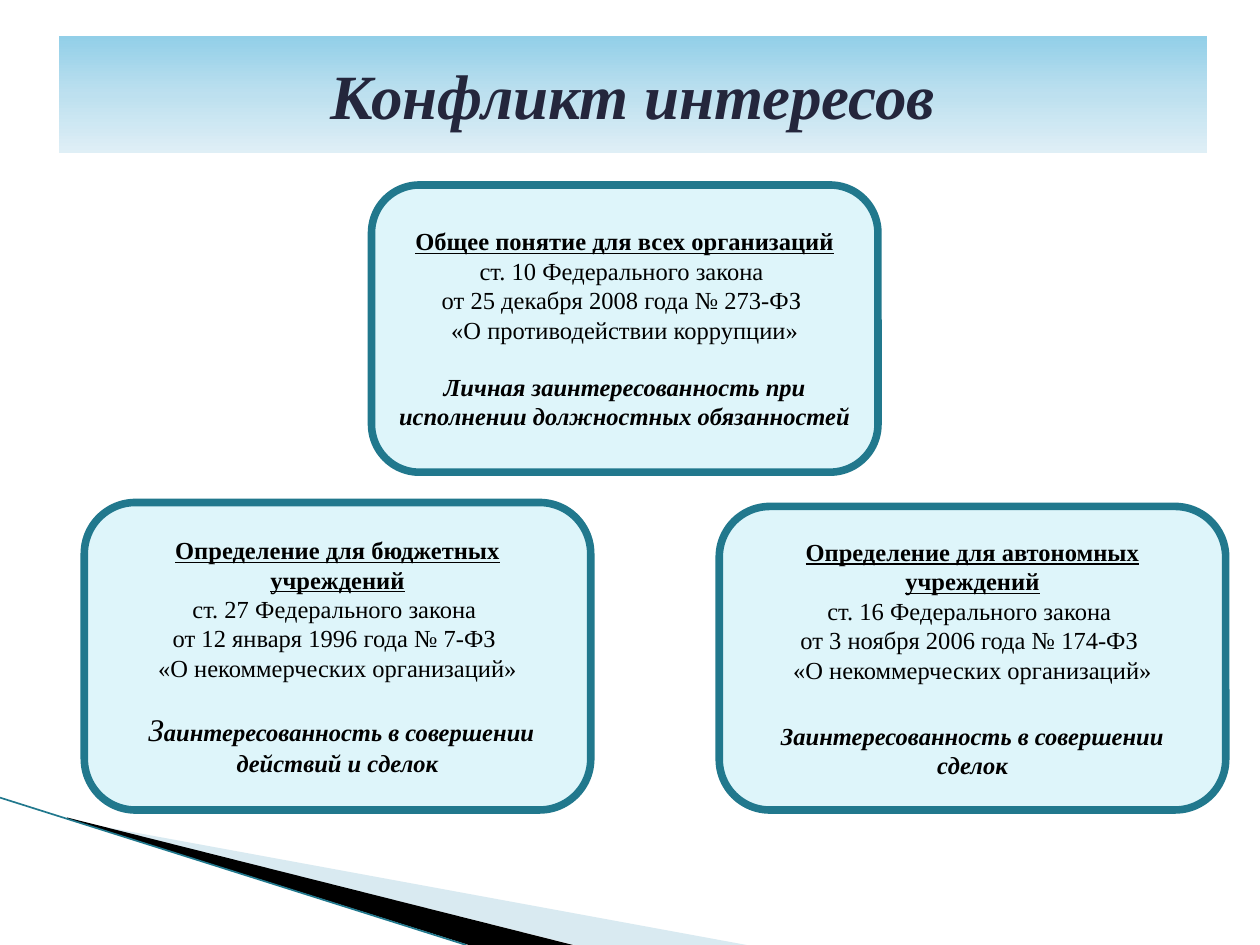
from copy import deepcopy

from lxml import etree
from pptx import Presentation
from pptx import util as u
from pptx.dml.color import RGBColor
from pptx.enum import shapes, text
from pptx.oxml import ns

Cm, Pt = u.Cm, u.Pt
FONT = "Times New Roman"
COLORS = {
    "title": "24263C", "text": "000000", "card": "DEF5FA", "border": "21788D",
    "wing": "A0CBDC", "shade": "000000",
    "banner_top": "92CFE8", "banner_mid": "BDE0EF", "banner_end": "DFEFF6",
}
CARD_WIDTH = 10.21


def rgb(name):
    return RGBColor.from_string(COLORS[name])


def add_span(para, words, size=14, color="text", bold=False, italic=False,
             underline=False):
    span = para.add_run()
    span.text = words
    font = span.font
    font.name, font.size = FONT, Pt(size)
    font.bold, font.italic, font.underline = bold, italic, underline
    font.color.rgb = rgb(color)


def add_box(page, kind, left, top, width, height):
    box = page.shapes.add_shape(kind, Cm(left), Cm(top), Cm(width), Cm(height))
    box.shadow.inherit = False
    box.text_frame.word_wrap = True
    box.text_frame.vertical_anchor = text.MSO_ANCHOR.MIDDLE
    return box


def add_banner(page, words):
    box = add_box(page, shapes.MSO_SHAPE.RECTANGLE, 1.19, 0.73, 23.14, 2.36)
    box.line.fill.background()
    box.fill.gradient()
    box.fill.gradient_angle = 270
    # A new gradient has two stops; add a third
    first = next(box._element.spPr.iter(ns.qn("a:gs")))
    first.addnext(deepcopy(first))
    names = ("banner_top", "banner_mid", "banner_end")
    for stop, name, position in zip(box.fill.gradient_stops, names, (0, 0.5, 1)):
        stop.color.rgb = rgb(name)
        stop.position = position
    para = box.text_frame.paragraphs[0]
    para.alignment = text.PP_ALIGN.CENTER
    add_span(para, words, size=36, color="title", bold=True, italic=True)


def add_card(page, left, top, height, heading, law, conclusion, gap):
    """Card with a heading, lines of law and a conclusion of (words, format) spans."""
    box = add_box(page, shapes.MSO_SHAPE.ROUNDED_RECTANGLE,
                  left, top, CARD_WIDTH, height)
    box.fill.solid()
    box.fill.fore_color.rgb = rgb("card")
    box.line.color.rgb = rgb("border")
    box.line.width = Pt(4.33)
    frame = box.text_frame
    add_span(frame.paragraphs[0], heading, bold=True, underline=True)
    for line in law:
        add_span(frame.add_paragraph(), line)
    last = frame.add_paragraph()
    last.space_before = Pt(gap)
    for words, style in conclusion:
        add_span(last, words, italic=True, **style)
    for para in frame.paragraphs:
        para.alignment = text.PP_ALIGN.CENTER


def add_wedge(page, points, color, alpha=None):
    corners = [(Cm(x), Cm(y)) for x, y in points]
    builder = page.shapes.build_freeform(*corners[0])
    builder.add_line_segments(corners[1:], close=True)
    wedge = builder.convert_to_shape()
    wedge.shadow.inherit = False
    wedge.line.fill.background()
    wedge.fill.solid()
    wedge.fill.fore_color.rgb = rgb(color)
    if alpha is not None:
        tone = next(wedge._element.spPr.iter(ns.qn("a:srgbClr")))
        etree.SubElement(tone, ns.qn("a:alpha")).set("val", str(alpha * 1000))


def add_edge(page, start, end):
    edge = page.shapes.add_connector(
        shapes.MSO_CONNECTOR.STRAIGHT, *(Cm(v) for v in start + end))
    edge.line.color.rgb = rgb("border")
    edge.line.width = Pt(0.95)
    etree.SubElement(edge._element.spPr, ns.qn("a:effectLst"))


def main():
    deck = Presentation()
    deck.slide_width, deck.slide_height = Cm(25.4), Cm(19.05)
    page = deck.slides.add_slide(deck.slide_layouts[6])

    # Corner decoration
    add_wedge(page, [(1.4, 16.54), (15.05, 19.05), (11.58, 19.05), (1.4, 16.51)],
              "wing", alpha=40)
    add_wedge(page, [(1.35, 16.48), (11.55, 19.05), (9.45, 19.05), (1.37, 16.51)],
              "shade")
    add_edge(page, (0, 16.08), (9.4, 19.05))

    # Title
    add_banner(page, "Конфликт интересов")

    # Definitions by kind of organisation
    bold = {"bold": True}
    add_card(page, 14.5, 10.21, 6.12,
             "Определение для автономных учреждений",
             ["ст. 16 Федерального закона ",
              "от 3 ноября 2006 года № 174-ФЗ ",
              "«О некоммерческих организаций»"],
             [("Заинтересованность в совершении сделок", bold)], gap=21)
    add_card(page, 1.7, 10.13, 6.2,
             "Определение для бюджетных учреждений",
             ["ст. 27 Федерального закона ",
              "от 12 января 1996 года № 7-ФЗ ",
              "«О некоммерческих организаций»"],
             [(" З", {"size": 18}),
              ("аинтересованность в совершении действий и сделок", bold)], gap=16)
    add_card(page, 7.49, 3.73, 5.79,
             "Общее понятие для всех организаций",
             ["ст. 10 Федерального закона ",
              "от 25 декабря 2008 года № 273-ФЗ ",
              "«О противодействии коррупции»"],
             [("Личная заинтересованность при исполнении должностных обязанностей",
               bold)], gap=16)

    deck.save("out.pptx")


if __name__ == "__main__":
    main()
